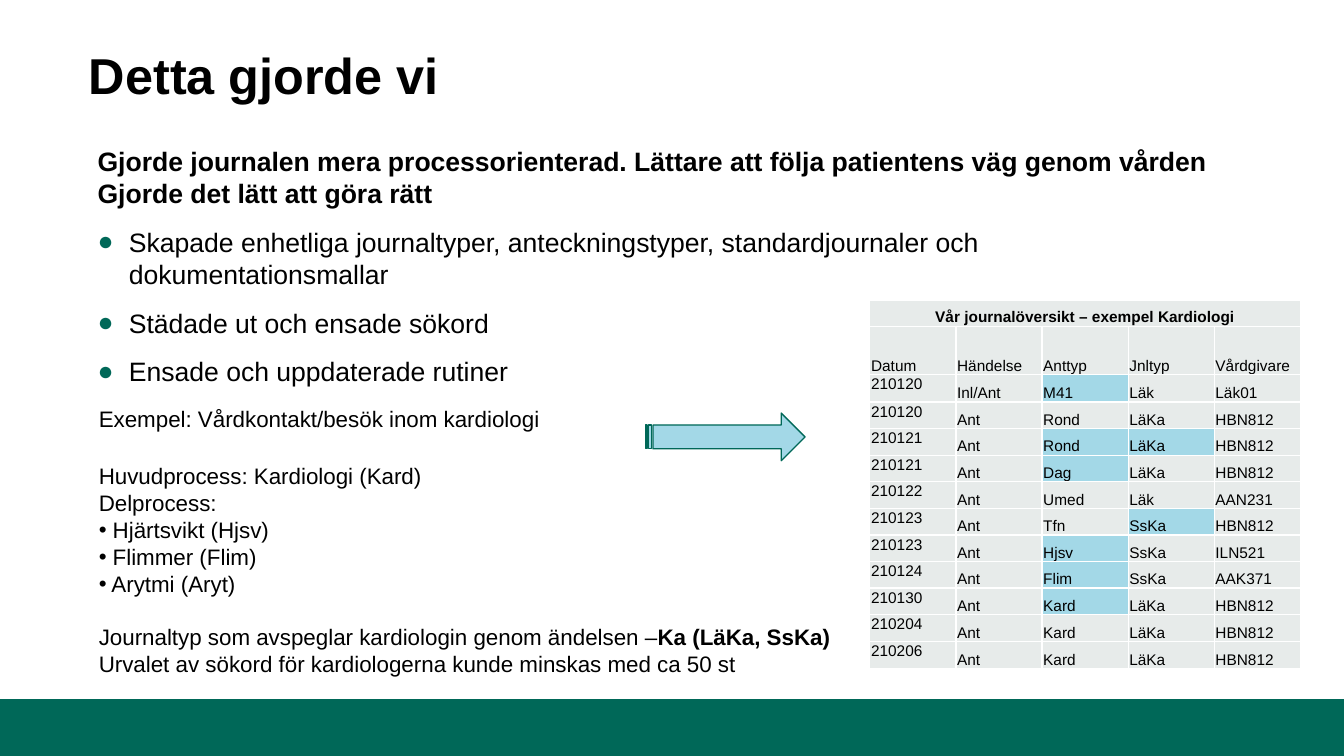
from lxml import etree
from pptx import Presentation
from pptx.dml.color import RGBColor
from pptx.enum.shapes import MSO_SHAPE
from pptx.enum.text import MSO_ANCHOR, MSO_AUTO_SIZE, PP_ALIGN
from pptx.oxml.ns import qn
from pptx.util import Cm, Pt

RECT, ARROW = MSO_SHAPE.RECTANGLE, MSO_SHAPE.STRIPED_RIGHT_ARROW
TOP, MID, LOW = MSO_ANCHOR.TOP, MSO_ANCHOR.MIDDLE, MSO_ANCHOR.BOTTOM
LEFT, CENTER = PP_ALIGN.LEFT, PP_ALIGN.CENTER
FIXED = MSO_AUTO_SIZE.NONE

GREEN, BLUE, GREY = "006858", "A3D8E7", "E7EBEA"
BLACK, WHITE = "000000", "FFFFFF"

HEADS = ["Datum", "Händelse", "Anttyp", "Jnltyp", "Vårdgivare"]
# A leading asterisk marks a highlighted cell.
VISITS = [
    ["210120", "Inl/Ant", "*M41", "Läk", "Läk01"],
    ["210120", "Ant", "Rond", "LäKa", "HBN812"],
    ["210121", "Ant", "*Rond", "*LäKa", "HBN812"],
    ["210121", "Ant", "*Dag", "LäKa", "HBN812"],
    ["210122", "Ant", "Umed", "Läk", "AAN231"],
    ["210123", "Ant", "Tfn", "*SsKa", "HBN812"],
    ["210123", "Ant", "*Hjsv", "SsKa", "ILN521"],
    ["210124", "Ant", "*Flim", "SsKa", "AAK371"],
    ["210130", "Ant", "*Kard", "LäKa", "HBN812"],
    ["210204", "Ant", "Kard", "LäKa", "HBN812"],
    ["210206", "Ant", "Kard", "LäKa", "HBN812"],
]


def color(code):
    return RGBColor.from_string(code)


def add_run(para, text, size, bold=False):
    run = para.add_run()
    run.text = text
    font = run.font
    font.name, font.size, font.bold = "Arial", Pt(size), bold
    font.color.rgb = color(BLACK)


def set_list(para, mark=None, tint=BLACK, left=0):
    """Set the bullet and hanging indent; no mark means no bullet."""
    props = para._p.get_or_add_pPr()
    props.set("marL", str(Cm(left)))
    props.set("indent", str(-Cm(left)))
    if mark is None:
        etree.SubElement(props, qn("a:buNone"))
        return
    paint = etree.SubElement(props, qn("a:buClr"))
    etree.SubElement(paint, qn("a:srgbClr"), val=tint)
    etree.SubElement(props, qn("a:buFont"), typeface="Arial")
    etree.SubElement(props, qn("a:buChar"), char=mark)


def next_para(frame, before=0):
    """Reuse the first paragraph while it is empty, otherwise add one."""
    para = frame.paragraphs[0]
    if para.runs:
        para = frame.add_paragraph()
    para.alignment, para.space_before = LEFT, Pt(before)
    return para


def place(shape, left, top, width, height):
    shape.left, shape.top = Cm(left), Cm(top)
    shape.width, shape.height = Cm(width), Cm(height)
    frame = shape.text_frame
    frame.word_wrap, frame.auto_size = True, FIXED
    frame.margin_left = frame.margin_right = 0
    frame.margin_top = frame.margin_bottom = 0
    return frame


def add_form(slide, kind, box, fill, line=None):
    shape = slide.shapes.add_shape(kind, *map(Cm, box))
    shape.shadow.inherit = False
    shape.fill.solid()
    shape.fill.fore_color.rgb = color(fill)
    if line:
        shape.line.color.rgb = color(line)
        shape.line.width = Pt(1)
    else:
        shape.line.fill.background()


def fill_title(slide):
    frame = place(slide.shapes.title, 2.24, 0.91, 29.41, 2.13)
    frame.vertical_anchor = MID
    para = next_para(frame)
    para.line_spacing = 0.9
    add_run(para, "Detta gjorde vi", 36, True)


def fill_body(slide):
    frame = place(slide.placeholders[1], 2.46, 3.66, 28.58, 6.76)
    frame.vertical_anchor = TOP
    lead = next_para(frame, 12)
    set_list(lead)
    add_run(lead, "Gjorde journalen mera processorienterad. "
            "Lättare att följa patientens väg genom vården", 19, True)
    lead.add_line_break()
    add_run(lead, "Gjorde det lätt att göra rätt", 19, True)
    for text in (
        "Skapade enhetliga journaltyper, anteckningstyper, "
        "standardjournaler och dokumentationsmallar",
        "Städade ut och ensade sökord",
        "Ensade och uppdaterade rutiner",
    ):
        para = next_para(frame, 12)
        set_list(para, "●", GREEN, 0.79)
        add_run(para, text, 19)


def add_notes(slide):
    """Add the worked example below the list."""
    box = slide.shapes.add_textbox(Cm(2.24), Cm(10.08), Cm(23.85), Cm(7.21))
    frame = box.text_frame
    frame.word_wrap = True
    for text, mark, before in (
        ("Exempel: Vårdkontakt/besök inom kardiologi", None, 0),
        ("Huvudprocess: Kardiologi (Kard)", None, 22),
        ("Delprocess:", None, 0),
        (" Hjärtsvikt (Hjsv)", "•", 0),
        (" Flimmer (Flim)", "•", 0),
        (" Arytmi (Aryt)", "•", 0),
        ("Journaltyp som avspeglar kardiologin genom ändelsen –", None, 19),
    ):
        para = next_para(frame, before)
        set_list(para, mark)
        add_run(para, text, 16)
    add_run(para, "Ka (LäKa, SsKa)", 16, True)
    para.add_line_break()
    add_run(para, "Urvalet av sökord för kardiologerna "
            "kunde minskas med ca 50 st", 16)


def style_cell(cell, fill, anchor=LOW):
    cell.margin_left = cell.margin_right = cell.margin_top = Cm(0.03)
    cell.margin_bottom = 0
    cell.vertical_anchor = anchor
    props = cell._tc.get_or_add_tcPr()
    for side in ("lnL", "lnR", "lnT", "lnB"):
        edge = etree.SubElement(props, qn("a:" + side), w=str(Pt(1)))
        paint = etree.SubElement(edge, qn("a:solidFill"))
        etree.SubElement(paint, qn("a:srgbClr"), val=WHITE)
    cell.fill.solid()
    cell.fill.fore_color.rgb = color(fill)


def add_log(slide):
    """Add the table of journal entries."""
    rows = [["Vår journalöversikt – exempel Kardiologi"] + [""] * 4,
            HEADS] + VISITS
    frame = slide.shapes.add_table(len(rows), len(HEADS), Cm(21.92),
                                   Cm(7.57), Cm(10.85), Cm(9.27))
    table = frame.table
    for col in table.columns:
        col.width = Cm(2.17)
    highs = [0.65, 1.21, 0.7] + [0.67] * 9 + [0.68]
    for i, (words, high) in enumerate(zip(rows, highs)):
        table.rows[i].height = Cm(high)
        for j, word in enumerate(words):
            cell = table.cell(i, j)
            style_cell(cell, BLUE if word.startswith("*") else GREY,
                       TOP if i > 1 and j == 0 else LOW)
            para = cell.text_frame.paragraphs[0]
            para.alignment = CENTER if i == 0 else LEFT
            if word:
                add_run(para, word.lstrip("*"), 11, i == 0)
    table.cell(0, 0).merge(table.cell(0, 4))


def main():
    deck = Presentation()
    deck.slide_width, deck.slide_height = Cm(33.87), Cm(19.05)
    slide = deck.slides.add_slide(deck.slide_layouts[1])
    add_form(slide, RECT, (0, 17.62, 33.87, 1.43), GREEN)
    fill_title(slide)
    fill_body(slide)
    add_form(slide, ARROW, (16.27, 10.41, 4.02, 1.2), BLUE, GREEN)
    add_log(slide)
    add_notes(slide)
    deck.save("out.pptx")


if __name__ == "__main__":
    main()
